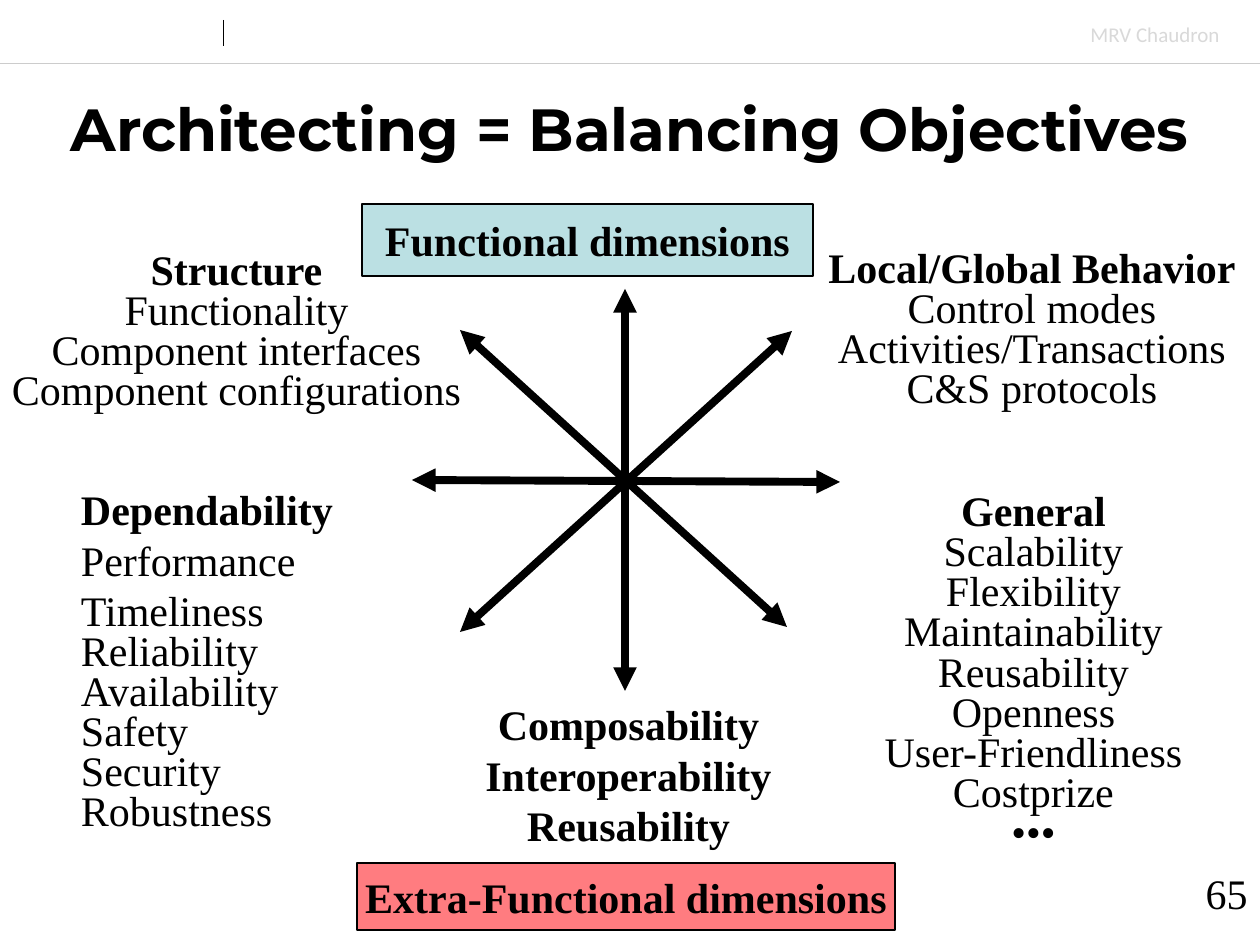
from lxml.etree import SubElement
from pptx import Presentation
from pptx.dml.color import RGBColor
from pptx.enum.shapes import MSO_CONNECTOR as Connector, MSO_SHAPE as Shape
from pptx.enum.text import MSO_ANCHOR as Anchor, PP_ALIGN as Align
from pptx.oxml.ns import qn
from pptx.util import Emu, Pt

EMU_PER_PX = 914400 / 126

BLACK = RGBColor(0x00, 0x00, 0x00)
RULE_GRAY = RGBColor(0xCC, 0xCC, 0xCC)
NAME_GRAY = RGBColor(0xD9, 0xD9, 0xD9)
PALE_BLUE = RGBColor(0xBB, 0xE0, 0xE3)
CORAL = RGBColor(0xFF, 0x7C, 0x80)

TIGHT = Pt(22.9)


def px(length):
    return Emu(round(length * EMU_PER_PX))


def write_text(frame, lines, *, size=24, font="Times New Roman", color=BLACK,
               align=Align.CENTER, anchor=Anchor.TOP, wrap=False, inset=None,
               bold_lines=1, spacing=None, loose_lines=()):
    """Fill a frame; the first bold_lines are bold, loose_lines skip spacing."""
    frame.word_wrap = wrap
    frame.vertical_anchor = anchor
    if inset is not None:
        frame.margin_left = frame.margin_right = px(inset)
        frame.margin_top = frame.margin_bottom = px(inset)
    for index, line in enumerate(lines):
        paragraph = frame.add_paragraph() if index else frame.paragraphs[0]
        paragraph.alignment = align
        if spacing and index not in loose_lines:
            paragraph.line_spacing = spacing
        run = paragraph.add_run()
        run.text = line
        run.font.name = font
        run.font.size = Pt(size)
        run.font.bold = index < bold_lines
        run.font.color.rgb = color


class SlideBuilder:
    def __init__(self, slide):
        self.slide = slide

    def text(self, box, lines, **text_format):
        shape = self.slide.shapes.add_textbox(*map(px, box))
        write_text(shape.text_frame, lines, **text_format)

    def label(self, box, line, fill):
        shape = self.slide.shapes.add_shape(Shape.RECTANGLE, *map(px, box))
        shape.shadow.inherit = False
        shape.fill.solid()
        shape.fill.fore_color.rgb = fill
        shape.line.color.rgb = BLACK
        shape.line.width = Pt(1)
        write_text(shape.text_frame, [line], anchor=Anchor.MIDDLE)

    def line(self, start, end, width, color=BLACK, arrows=False):
        connector = self.slide.shapes.add_connector(
            Connector.STRAIGHT, *map(px, start + end))
        connector.line.color.rgb = color
        connector.line.width = Pt(width)
        properties = connector.element.spPr
        if arrows:
            outline = properties.find(qn("a:ln"))
            for tag in ("a:headEnd", "a:tailEnd"):
                SubElement(outline, qn(tag), type="triangle")
        SubElement(properties, qn("a:effectLst"))


def main():
    presentation = Presentation()
    presentation.slide_width, presentation.slide_height = px(1260), px(945)
    slide = presentation.slides.add_slide(presentation.slide_layouts[6])
    builder = SlideBuilder(slide)

    # Header, title and page number
    builder.line((0, 63), (1260, 63), 0.25, RULE_GRAY)
    builder.line((223, 20), (223, 46), 0.5)
    builder.text((1078, 15, 155, 38), ["MRV Chaudron"], size=12, font="Calibri",
                 color=NAME_GRAY, align=Align.LEFT, bold_lines=0)
    builder.text((0, 81, 1260, 94), ["Architecting = Balancing Objectives"],
                 size=34, font="Montserrat", anchor=Anchor.MIDDLE, wrap=True)
    builder.text((998, 861, 262, 63), ["65"], align=Align.RIGHT, wrap=True,
                 bold_lines=0)

    # Groups of objectives, each headed by a bold line
    centered_groups = [
        ((-5, 254, 483, 160),
         ["Structure", "Functionality", "Component interfaces",
          "Component configurations"]),
        ((814, 252, 436, 160),
         ["Local/Global Behavior", "Control modes", "Activities/Transactions",
          "C&S protocols"]),
        ((884, 495, 299, 360),
         ["General", "Scalability", "Flexibility", "Maintainability",
          "Reusability", "Openness", "User-Friendliness", "Costprize", "•••"]),
    ]
    for box, lines in centered_groups:
        builder.text(box, lines, inset=0, spacing=TIGHT)
    builder.text((485, 699, 287, 151),
                 ["Composability", "Interoperability", "Reusability"],
                 inset=0, bold_lines=3)
    builder.text((81, 494, 252, 390),
                 ["Dependability", "Performance", "Timeliness", "Reliability",
                  "Availability", "Safety", "Security", "Robustness"],
                 align=Align.LEFT, inset=0, spacing=TIGHT, loose_lines=(1, 2))

    # Star of opposing directions
    for start, end in [((625, 289), (625, 691)), ((412, 480), (840, 482)),
                       ((787, 627), (460, 330)), ((460, 632), (792, 331))]:
        builder.line(start, end, 4.5, arrows=True)

    # Dimension labels
    builder.label((362, 204, 451, 72), "Functional dimensions", PALE_BLUE)
    builder.label((357, 863, 538, 67), "Extra-Functional dimensions", CORAL)

    presentation.save("out.pptx")


if __name__ == "__main__":
    main()
